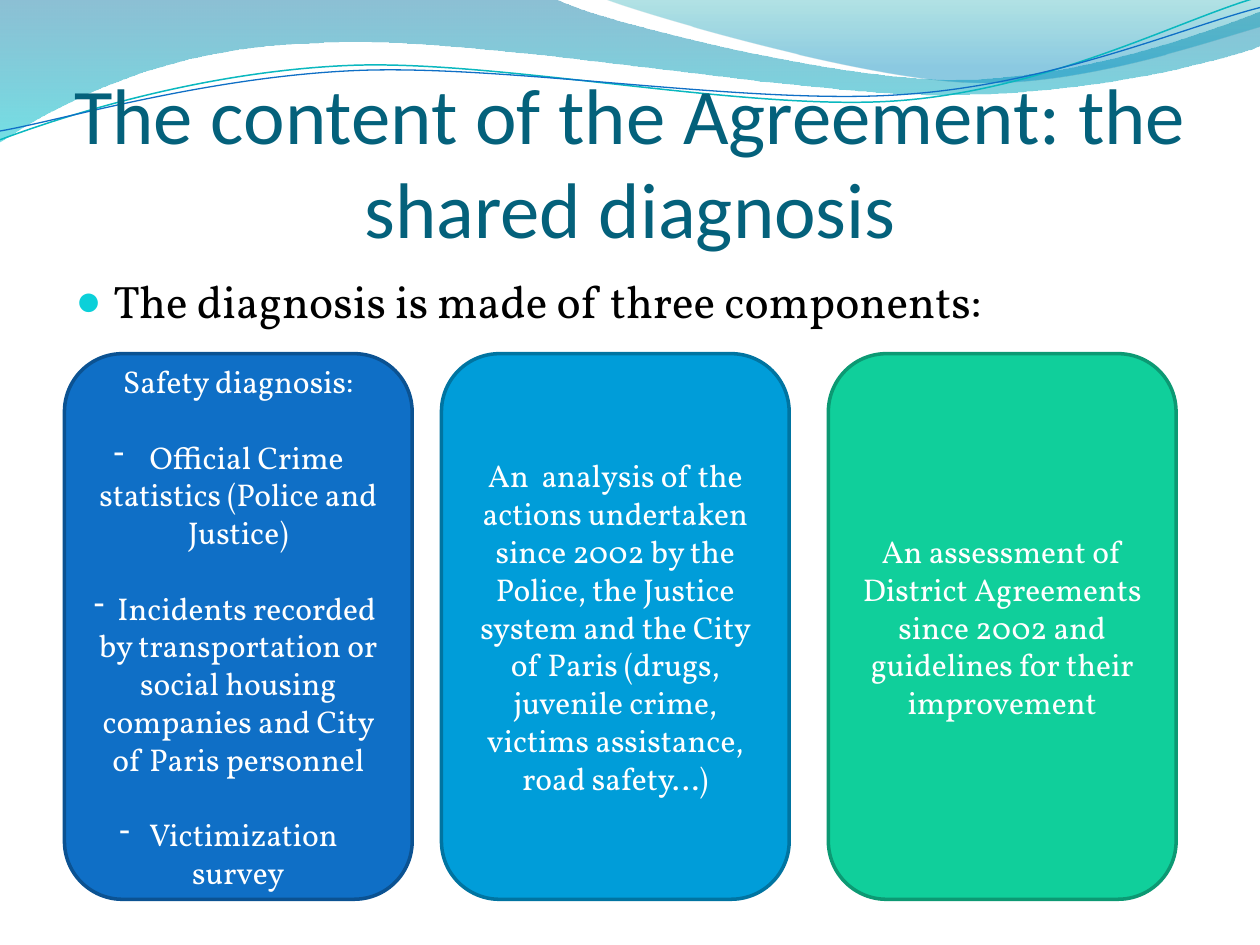
from lxml.etree import Element, SubElement
from pptx import Presentation
from pptx.dml.color import RGBColor
from pptx.enum.shapes import MSO_SHAPE
from pptx.enum.text import MSO_ANCHOR, MSO_AUTO_SIZE, PP_ALIGN
from pptx.oxml.ns import qn
from pptx.util import Cm, Pt

# Content
TITLE = "The content of the Agreement: the shared diagnosis"
INTRO = "The diagnosis is made of three components:"
CARDS = [  # left in cm, fill, line, paragraphs as (text, bullet)
    (1.3, "0F6FC6", "0B5292", [
        ("Safety diagnosis:", None),
        (" Official Crime statistics (Police and Justice)", "-"),
        (" Incidents recorded by transportation or social housing companies"
         " and City of Paris personnel", "-"),
        ("Victimization survey", "-")]),
    (8.9, "009DD9", "0074A1", [
        ("An  analysis of the actions undertaken since 2002 by the Police, the Justice "
         "system and the City of Paris (drugs, juvenile crime, victims assistance, "
         "road safety…)", None)]),
    (16.7, "10CF9B", "0C9973", [
        ("An assessment of District Agreements since 2002 and guidelines for their "
         "improvement", None)]),
]
CARD_TOP, CARD_WIDTH, CARD_HEIGHT = 7.13, 7.01, 11.0

# Header waves in inches: a pair is a line end, six numbers are a Bezier curve
UNIT = 2.54
WAVES = [
    {"start": (0, 0), "stops": [("0074A1", 45, 0), ("00C6CF", 55, 100)],
     "steps": [(4.4, -0.01), (4.76, 0.17, 6.64, 0.63, 7.58, 0.63),
               (8.53, 0.63, 9.58, 0.26, 10, 0.09), (10.01, 0.36),
               (9.83, 0.44, 8.7, 0.76, 7.46, 0.75), (6.22, 0.75, 3.82, 0.28, 2.57, 0.34),
               (1.29, 0.36, 0.46, 0.83, -0.01, 1.13), (0, 0)]},
    {"start": (4.79, -0.01), "stops": [("00A1A9", 30, 0), ("008BBF", 45, 80)],
     "steps": [(5.09, 0.11, 6.82, 0.62, 7.69, 0.65), (8.56, 0.69, 9.61, 0.32, 10, 0.21),
               (10, 0), (4.79, -0.01)]},
    {"start": (0, 1.11), "line": ("0AB8BF", 0.85),
     "steps": [(0.48, 0.93, 1.58, 0.57, 2.77, 0.52), (3.95, 0.47, 5.93, 0.89, 7.13, 0.8),
               (8.33, 0.71, 9.38, 0.15, 9.98, -0.02)]},
    {"start": (0, 1.04), "line": ("0F6FC6", 0.75),
     "steps": [(0.47, 0.96, 1.64, 0.61, 2.83, 0.56), (4.03, 0.51, 5.97, 0.84, 7.17, 0.75),
               (8.36, 0.67, 9.41, 0.21, 10, 0.06)]},
]


def color(hex_text):
    return RGBColor.from_string(hex_text)


def set_attributes(target, values):
    for name, value in values.items():
        setattr(target, name, value)


def write(para, text, font, size, hex_text):
    span = para.add_run()
    span.text = text
    set_attributes(span.font, {"name": font, "size": Pt(size)})
    span.font.color.rgb = color(hex_text)


def add_bullet(para, character, hex_text=None, percent=None):
    properties = para._p.get_or_add_pPr()
    if hex_text:
        holder = SubElement(properties, qn("a:buClr"))
        SubElement(holder, qn("a:srgbClr"), val=hex_text)
    if percent:
        SubElement(properties, qn("a:buSzPct"), val=str(percent * 1000))
    else:
        SubElement(properties, qn("a:buFontTx"))
    SubElement(properties, qn("a:buChar"), char=character)


def bend(shape, steps):
    """Turn the straight segments that have control points into curves."""
    segments = list(shape._element.iter(qn("a:lnTo")))
    for segment, step in zip(segments, steps):
        if len(step) == 2:
            continue
        segment.tag = qn("a:cubicBezTo")
        for index in (0, 1):
            x, y = step[2 * index:2 * index + 2]
            segment.insert(index, Element(qn("a:pt"), x=str(Cm(x * UNIT) - shape.left),
                                          y=str(Cm(y * UNIT) - shape.top)))


def add_wave(shapes, wave):
    ends = [wave["start"]] + [step[-2:] for step in wave["steps"]]
    points = [(Cm(x * UNIT), Cm(y * UNIT)) for x, y in ends]
    builder = shapes.build_freeform(*points[0])
    builder.add_line_segments(points[1:], close="stops" in wave)
    shape = builder.convert_to_shape()
    bend(shape, wave["steps"])
    shape.shadow.inherit = False
    if "line" in wave:
        hex_text, width = wave["line"]
        shape.fill.background()
        shape.line.color.rgb = color(hex_text)
        shape.line.width = Pt(width)
        return
    shape.line.fill.background()
    shape.fill.gradient()
    shape.fill.gradient_angle = 270
    for stop, (hex_text, opacity, position) in zip(shape.fill.gradient_stops, wave["stops"]):
        stop.color.rgb = color(hex_text)
        stop.position = position / 100
        SubElement(stop._gs[0], qn("a:alpha"), val=str(opacity * 1000))


def add_card(shapes, left, fill, line, paragraphs):
    card = shapes.add_shape(MSO_SHAPE.ROUNDED_RECTANGLE, Cm(left), Cm(CARD_TOP),
                            Cm(CARD_WIDTH), Cm(CARD_HEIGHT))
    card.shadow.inherit = False
    card.fill.solid()
    card.fill.fore_color.rgb = color(fill)
    card.line.color.rgb = color(line)
    card.line.width = Pt(2)
    frame = card.text_frame
    set_attributes(frame, {"word_wrap": True, "vertical_anchor": MSO_ANCHOR.MIDDLE})
    for index, (text, bullet) in enumerate(paragraphs):
        para = frame.add_paragraph() if index else frame.paragraphs[0]
        para.alignment = PP_ALIGN.CENTER
        if index:
            para.space_before = Pt(21.5)
        if bullet:
            add_bullet(para, bullet)
        write(para, text, "Vollkorn", 18, "FFFFFF")


def main():
    deck = Presentation()
    set_attributes(deck, {"slide_width": Cm(25.4), "slide_height": Cm(19.05)})
    page = deck.slides.add_slide(deck.slide_layouts[1])
    title, body = page.placeholders

    # Waves go behind the placeholders
    for wave in WAVES:
        add_wave(page.shapes, wave)
    for holder in (title, body):
        page.shapes._spTree.append(holder._element)

    # Title
    set_attributes(title, {"left": Cm(1.27), "top": Cm(1.95),
                           "width": Cm(22.86), "height": Cm(3.18)})
    set_attributes(title.text_frame, {
        "margin_left": 0, "margin_right": 0, "margin_bottom": 0, "margin_top": Cm(0.13),
        "vertical_anchor": MSO_ANCHOR.BOTTOM, "word_wrap": True,
        "auto_size": MSO_AUTO_SIZE.NONE})
    para = title.text_frame.paragraphs[0]
    para.alignment = PP_ALIGN.CENTER
    write(para, TITLE, "Calibri", 45, "04617B")

    # Introduction
    set_attributes(body, {"left": Cm(1.27), "top": Cm(5.38),
                          "width": Cm(22.86), "height": Cm(12.19)})
    body.text_frame.auto_size = MSO_AUTO_SIZE.NONE
    para = body.text_frame.paragraphs[0]
    indent = Cm(0.76)
    for name, value in {"marL": indent, "indent": -indent}.items():
        para._p.get_or_add_pPr().set(name, str(value))
    add_bullet(para, "●", "0BD0D9", 95)
    write(para, INTRO, "Vollkorn", 26, "000000")

    # Cards
    for card in CARDS:
        add_card(page.shapes, *card)
    deck.save("out.pptx")


if __name__ == "__main__":
    main()
